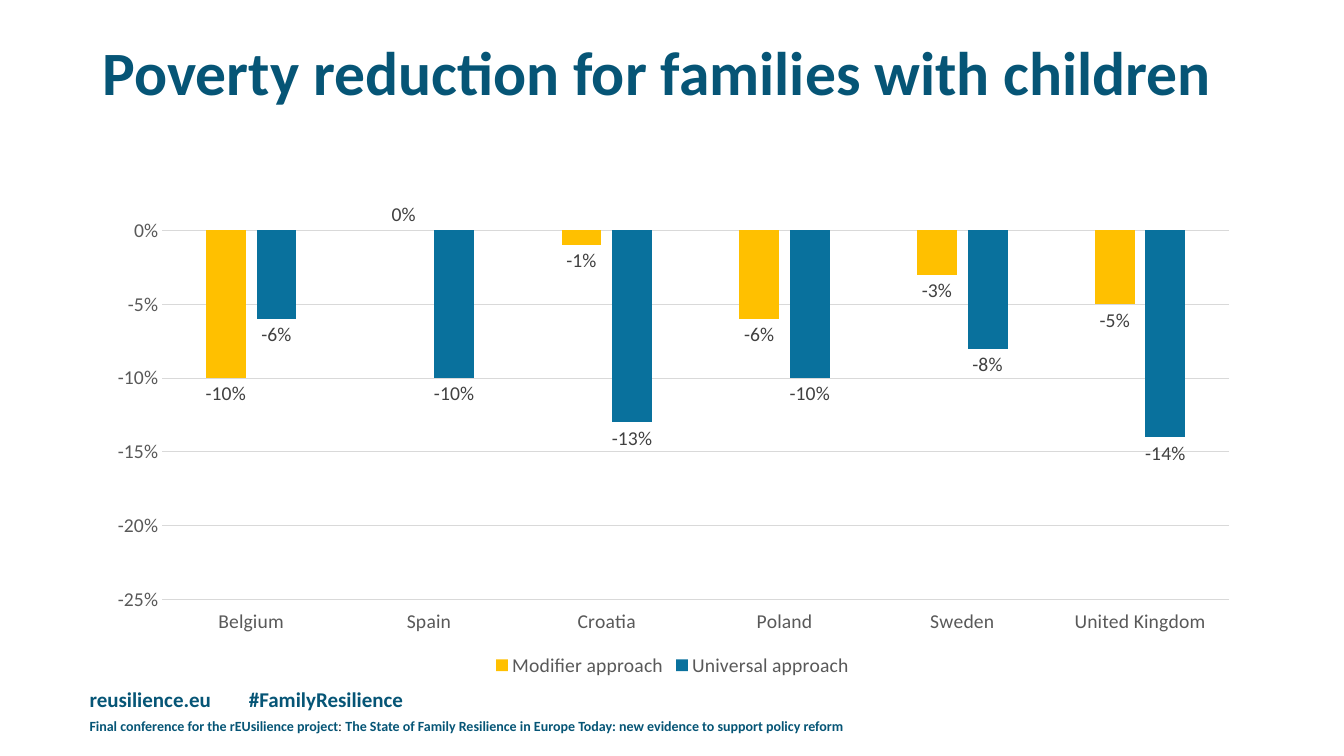
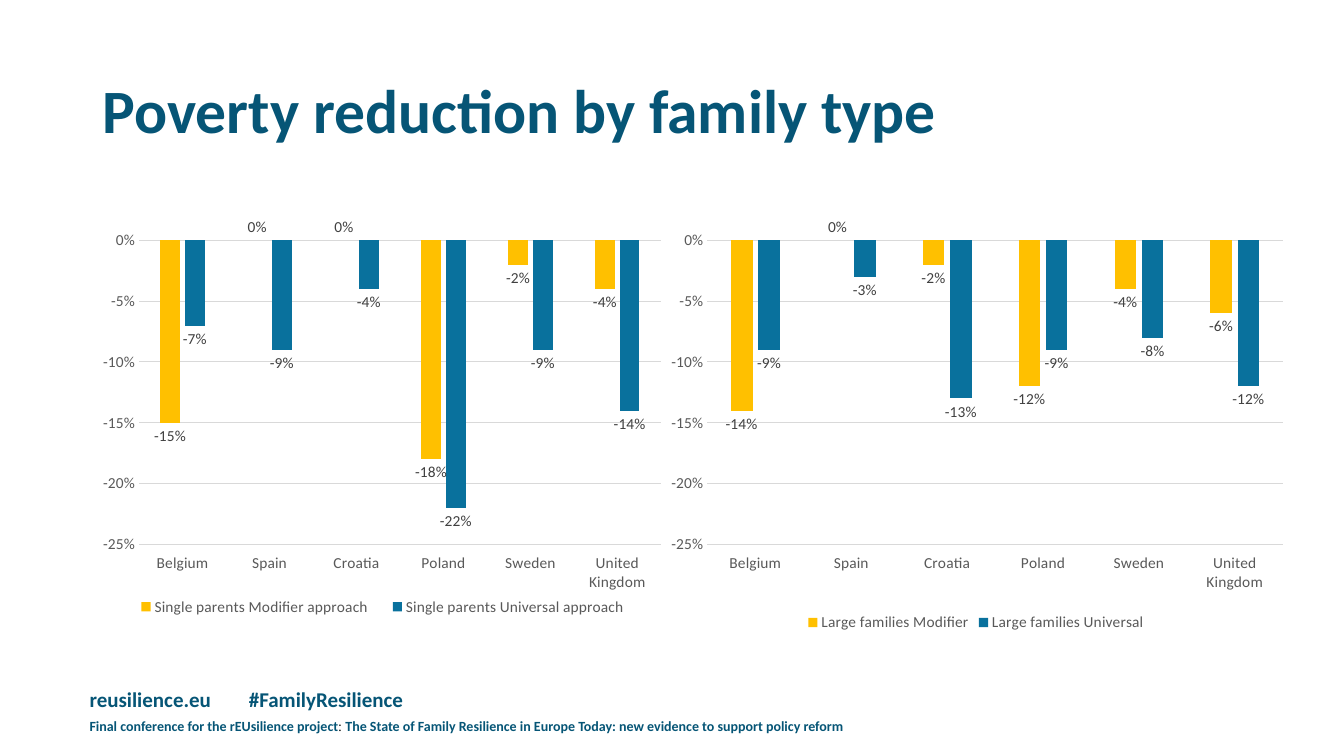
from dataclasses import dataclass

from lxml.etree import SubElement
from pptx import Presentation
from pptx.chart.data import CategoryChartData
from pptx.dml.color import RGBColor
from pptx.enum.chart import (XL_CHART_TYPE, XL_LABEL_POSITION, XL_LEGEND_POSITION,
                             XL_TICK_LABEL_POSITION, XL_TICK_MARK)
from pptx.enum.text import MSO_ANCHOR
from pptx.oxml.ns import qn
from pptx.util import Inches, Pt


@dataclass(frozen=True)
class Theme:
    font: str = "Calibri"
    separator_font: str = "Times New Roman"
    heading: RGBColor = RGBColor(0x06, 0x55, 0x76)
    black: RGBColor = RGBColor(0, 0, 0)
    axis_text: RGBColor = RGBColor(0x59, 0x59, 0x59)
    value_text: RGBColor = RGBColor(0x40, 0x40, 0x40)
    grid: RGBColor = RGBColor(0xD9, 0xD9, 0xD9)
    series: tuple = (RGBColor(0xFF, 0xC0, 0x00), RGBColor(0x09, 0x71, 0x9D))
    title_size: int = 44
    contact_size: int = 15
    event_size: int = 10
    chart_size: int = 14
    small_chart_size: int = 11


THEME = Theme()
PERCENT = "0%"
COUNTRIES = ("Belgium", "Spain", "Croatia", "Poland", "Sweden", "United Kingdom")


def style_font(font, size, color, bold=False, name=THEME.font):
    font.name = name
    font.size = Pt(size)
    font.bold = bold
    font.color.rgb = color


def set_layout(parent, index, bounds, inner=False):
    """Fix a chart part at x, y, width, height, as fractions of the chart."""
    for old in parent.findall(qn("c:layout")):
        parent.remove(old)
    layout = SubElement(parent, qn("c:layout"))
    parent.insert(index, layout)
    manual = SubElement(layout, qn("c:manualLayout"))
    settings = [("layoutTarget", "inner")] if inner else []
    settings += [("xMode", "edge"), ("yMode", "edge")]
    settings += zip("xywh", bounds)
    for tag, value in settings:
        SubElement(manual, qn(f"c:{tag}")).set("val", str(value))


class Deck:
    def __init__(self, theme):
        self.theme = theme
        self.presentation = Presentation()
        self.presentation.slide_width = Inches(13.33)
        self.presentation.slide_height = Inches(7.5)
        self.slide = None

    def start_slide(self, title, title_top):
        blank = self.presentation.slide_layouts[6]
        self.slide = self.presentation.slides.add_slide(blank)
        self.add_footer()
        self.add_title(title, title_top)

    def add_text(self, bounds, runs, size, anchor=MSO_ANCHOR.TOP):
        """Add one paragraph; runs hold text, font name, colour and bold."""
        box = self.slide.shapes.add_textbox(*map(Inches, bounds))
        frame = box.text_frame
        frame.word_wrap = True
        frame.vertical_anchor = anchor
        paragraph = frame.paragraphs[0]
        for text, name, color, bold in runs:
            run = paragraph.add_run()
            run.text = text
            style_font(run.font, size, color, bold, name)
        return paragraph

    def heading_run(self, text):
        return text, self.theme.font, self.theme.heading, True

    def add_title(self, text, top):
        title = self.add_text((0.92, top, 11.5, 1.45), [self.heading_run(text)],
                              self.theme.title_size, MSO_ANCHOR.MIDDLE)
        title.line_spacing = 0.9

    def add_footer(self):
        theme = self.theme
        contact = self.add_text(
            (0.79, 6.76, 4.2, 0.62),
            [self.heading_run("reusilience.eu\t"), self.heading_run("#FamilyResilience")],
            theme.contact_size)
        tabs = SubElement(contact._p.get_or_add_pPr(), qn("a:tabLst"))
        tab = SubElement(tabs, qn("a:tab"))
        tab.set("pos", str(Inches(1.58)))
        tab.set("algn", "l")
        self.add_text(
            (0.79, 7.07, 7.9, 0.27),
            [self.heading_run("Final conference for the rEUsilience project"),
             (": ", theme.separator_font, theme.black, False),
             self.heading_run("The State of Family Resilience in Europe Today: "
                              "new evidence to support policy reform")],
            theme.event_size)

    def add_column_chart(self, bounds, series, size, plot_bounds, legend_bounds=None):
        data = CategoryChartData(number_format=PERCENT)
        data.categories = COUNTRIES
        for name, percents in series.items():
            data.add_series(name, [percent / 100 for percent in percents])
        chart = self.slide.shapes.add_chart(
            XL_CHART_TYPE.COLUMN_CLUSTERED, *map(Inches, bounds), data).chart
        chart.has_title = False
        style_font(chart.font, size, self.theme.black)
        self.style_columns(chart.plots[0], size)
        self.style_axes(chart, size)
        set_layout(chart._chartSpace.chart.plotArea, 0, plot_bounds, inner=True)

        chart.has_legend = True
        legend = chart.legend
        legend.position = XL_LEGEND_POSITION.BOTTOM
        legend.include_in_layout = False
        style_font(legend.font, size, self.theme.axis_text)
        if legend_bounds:
            set_layout(legend._element, 1, legend_bounds)

    def style_columns(self, plot, size):
        plot.vary_by_categories = False
        plot.gap_width = 219
        plot.overlap = -27
        for columns, color in zip(plot.series, self.theme.series):
            columns.invert_if_negative = False
            columns.format.fill.solid()
            columns.format.fill.fore_color.rgb = color
            labels = columns.data_labels
            labels.show_value = True
            labels.position = XL_LABEL_POSITION.OUTSIDE_END
            labels.number_format = PERCENT
            labels.number_format_is_linked = False
            style_font(labels.font, size, self.theme.value_text)

    def style_axes(self, chart, size):
        countries, percents = chart.category_axis, chart.value_axis
        for axis in (countries, percents):
            axis.major_tick_mark = axis.minor_tick_mark = XL_TICK_MARK.NONE
            style_font(axis.tick_labels.font, size, self.theme.axis_text)
        countries.tick_label_position = XL_TICK_LABEL_POSITION.LOW
        percents.minimum_scale, percents.maximum_scale = -0.25, 0
        percents.major_unit = 0.05
        percents.tick_labels.number_format = PERCENT
        percents.tick_labels.number_format_is_linked = False
        percents.format.line.fill.background()
        percents.has_major_gridlines = True
        for line in (countries.format.line, percents.major_gridlines.format.line):
            line.color.rgb = self.theme.grid
            line.width = Pt(0.75)


def main():
    deck = Deck(THEME)

    deck.start_slide("Poverty reduction for families with children", 0.02)
    deck.add_column_chart(
        (0.92, 2, 11.5, 4.76),
        {"Modifier approach": (-10, 0, -1, -6, -3, -5),
         "Universal approach": (-6, -10, -13, -10, -8, -14)},
        THEME.chart_size, (0.06, 0.06, 0.92, 0.77))

    deck.start_slide("Poverty reduction by family type", 0.4)
    family_plot = (0.08, 0.05, 0.9, 0.73)
    deck.add_column_chart(
        (0.92, 2.16, 5.75, 4.15),
        {"Single parents Modifier approach": (-15, 0, 0, -18, -2, -4),
         "Single parents Universal approach": (-7, -9, -4, -22, -9, -14)},
        THEME.small_chart_size, family_plot, legend_bounds=(0.05, 0.9, 0.9, 0.06))
    deck.add_column_chart(
        (6.51, 2.16, 6.34, 4.15),
        {"Large families Modifier": (-14, 0, -2, -12, -4, -6),
         "Large families Universal": (-9, -3, -13, -9, -8, -12)},
        THEME.small_chart_size, family_plot)

    deck.presentation.save("out.pptx")


if __name__ == "__main__":
    main()
